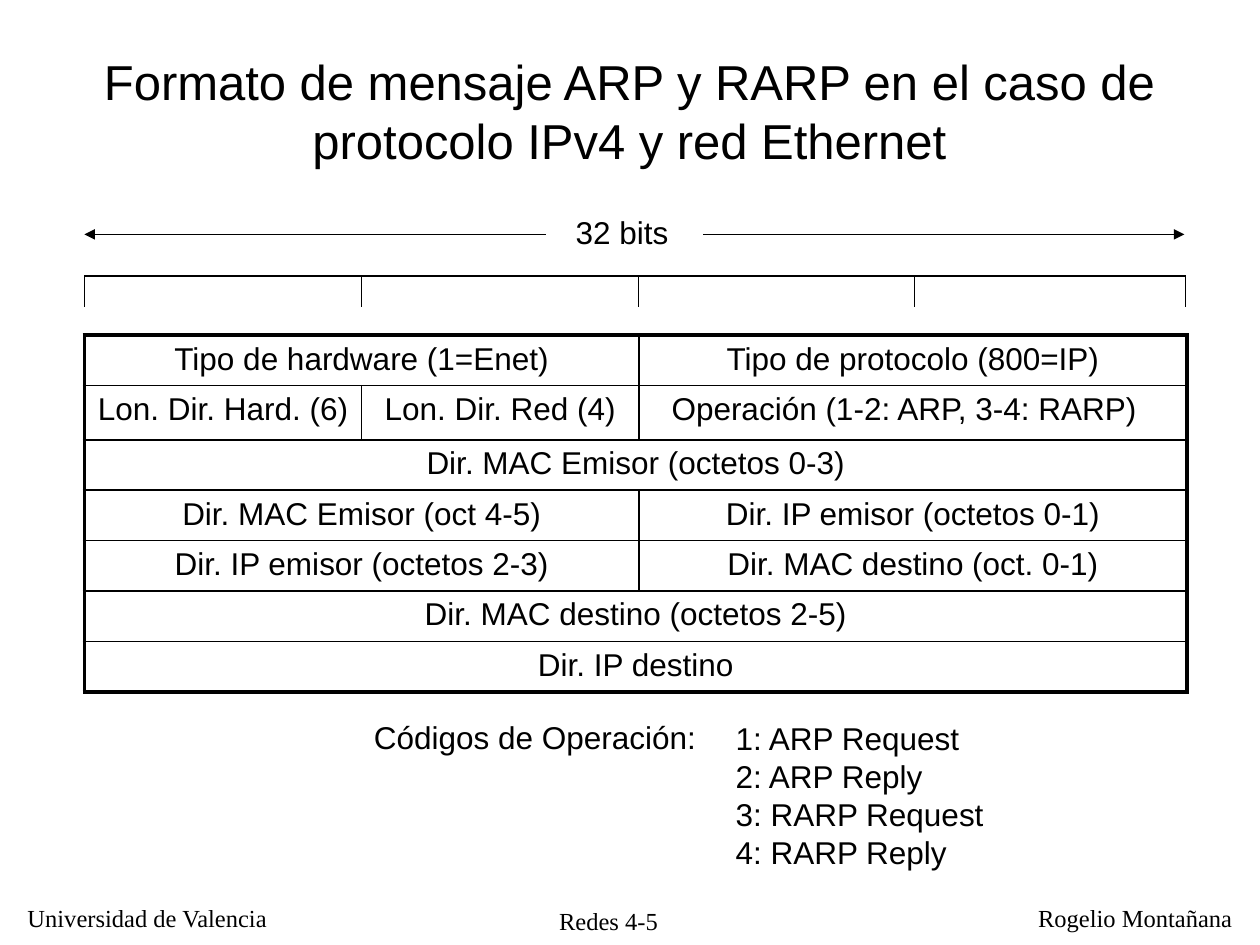
from lxml import etree
from pptx import Presentation
from pptx.dml.color import RGBColor
from pptx.enum.shapes import MSO_CONNECTOR
from pptx.enum.text import MSO_ANCHOR, MSO_AUTO_SIZE, PP_ALIGN
from pptx.oxml.ns import qn
from pptx.util import Inches, Pt

STRAIGHT = MSO_CONNECTOR.STRAIGHT
TOP = MSO_ANCHOR.TOP
NO_AUTOFIT = MSO_AUTO_SIZE.NONE
LEFT, CENTER = PP_ALIGN.LEFT, PP_ALIGN.CENTER
BLACK = "000000"
SANS, SERIF = "Arial", "Times New Roman"


def color(value):
    return RGBColor.from_string(value)


def write(para, text, size, font, align=LEFT):
    para.alignment = align
    span = para.add_run()
    span.text = text
    span.font.size = Pt(size)
    span.font.name = font
    span.font.color.rgb = color(BLACK)


deck = Presentation()
deck.slide_width, deck.slide_height = Inches(10), Inches(7.5)
page = deck.slides.add_slide(deck.slide_layouts[5])

title = page.shapes.title
title.left, title.top = Inches(0.58), Inches(0.36)
title.width, title.height = Inches(8.83), Inches(1.03)
title.text_frame.auto_size = NO_AUTOFIT
title.text_frame.vertical_anchor = TOP
write(title.text_frame.paragraphs[0],
      "Formato de mensaje ARP y RARP en el caso de protocolo IPv4 y red Ethernet",
      28, SANS, CENTER)

operation_codes = ["1: ARP Request", "2: ARP Reply", "3: RARP Request", "4: RARP Reply"]
labels = [
    (4.18, 7.14, 1.3, 0.3, ["Redes 4-5"], 14, SERIF, CENTER),
    (0.12, 7.12, 2.13, 0.33, ["Universidad de Valencia"], 14, SERIF, LEFT),
    (8.14, 7.12, 1.74, 0.33, ["Rogelio Montañana"], 14, SERIF, LEFT),
    (4.47, 1.64, 0.94, 0.4, ["32 bits"], 18, SANS, LEFT),
    (2.87, 5.65, 2.76, 0.4, ["Códigos de Operación:"], 18, SANS, LEFT),
    (5.74, 5.66, 2.17, 1.3, operation_codes, 18, SANS, LEFT),
]
for left, top, width, height, lines, size, font, align in labels:
    box = page.shapes.add_textbox(Inches(left), Inches(top), Inches(width), Inches(height))
    box.text_frame.word_wrap = False
    for index, line in enumerate(lines):
        para = box.text_frame.paragraphs[0] if index == 0 else box.text_frame.add_paragraph()
        write(para, line, size, font, align)

ruler = [(4.33, 1.86, 0.67, 1.86, True), (5.58, 1.86, 9.4, 1.86, True),
         (0.67, 2.19, 9.41, 2.19, False)]
ruler += [(x, 2.19, x, 2.44, False) for x in (0.67, 2.87, 5.07, 7.26, 9.41)]
for x1, y1, x2, y2, has_arrow in ruler:
    connector = page.shapes.add_connector(STRAIGHT, Inches(x1), Inches(y1), Inches(x2), Inches(y2))
    connector.line.color.rgb = color(BLACK)
    connector.line.width = Pt(0.75)
    if has_arrow:
        etree.SubElement(connector.line._get_or_add_ln(), qn("a:tailEnd"), type="triangle")
    etree.SubElement(connector._element.spPr, qn("a:effectLst"))

column_widths = [2.2, 2.2, 4.35]
row_heights = [0.4, 0.43] + [0.4] * 5
fields = [
    [("Tipo de hardware (1=Enet)", 2), ("Tipo de protocolo (800=IP)", 1)],
    [("Lon. Dir. Hard. (6)", 1), ("Lon. Dir. Red (4)", 1),
     ("Operación (1-2: ARP, 3-4: RARP)  ", 1)],
    [("Dir. MAC Emisor (octetos 0-3)", 3)],
    [("Dir. MAC Emisor (oct 4-5)", 2), ("Dir. IP emisor (octetos 0-1)", 1)],
    [("Dir. IP emisor (octetos 2-3)", 2), ("Dir. MAC destino (oct. 0-1)", 1)],
    [("Dir. MAC destino (octetos 2-5)", 3)],
    [("Dir. IP destino", 3)],
]
last_row, last_column = len(row_heights) - 1, len(column_widths) - 1
message = page.shapes.add_table(
    len(row_heights), len(column_widths), Inches(0.67), Inches(2.66),
    Inches(sum(column_widths)), Inches(sum(row_heights))).table
message.first_row = message.horz_banding = False
for column, width in zip(message.columns, column_widths):
    column.width = Inches(width)
for row, height in zip(message.rows, row_heights):
    row.height = Inches(height)

for row, row_fields in enumerate(fields):
    start = 0
    for text, span_width in row_fields:
        end = start + span_width - 1
        field = message.cell(row, start)
        if span_width > 1:
            field.merge(message.cell(row, end))
        write(field.text_frame.paragraphs[0], text, 18, SANS, CENTER)
        for column in range(start, end + 1):
            cell = message.cell(row, column)
            properties = cell._tc.get_or_add_tcPr()
            edges = [("a:lnL", column == start, start == 0),
                     ("a:lnR", column in (start, end), end == last_column),
                     ("a:lnT", True, row == 0),
                     ("a:lnB", True, row == last_row)]
            for tag, drawn, outer in edges:
                if drawn:
                    border = etree.SubElement(properties, qn(tag), w=str(Pt(2.25 if outer else 1)))
                    fill = etree.SubElement(border, qn("a:solidFill"))
                    etree.SubElement(fill, qn("a:srgbClr"), val=BLACK)
            cell.fill.background()
        start = end + 1

deck.save("out.pptx")
